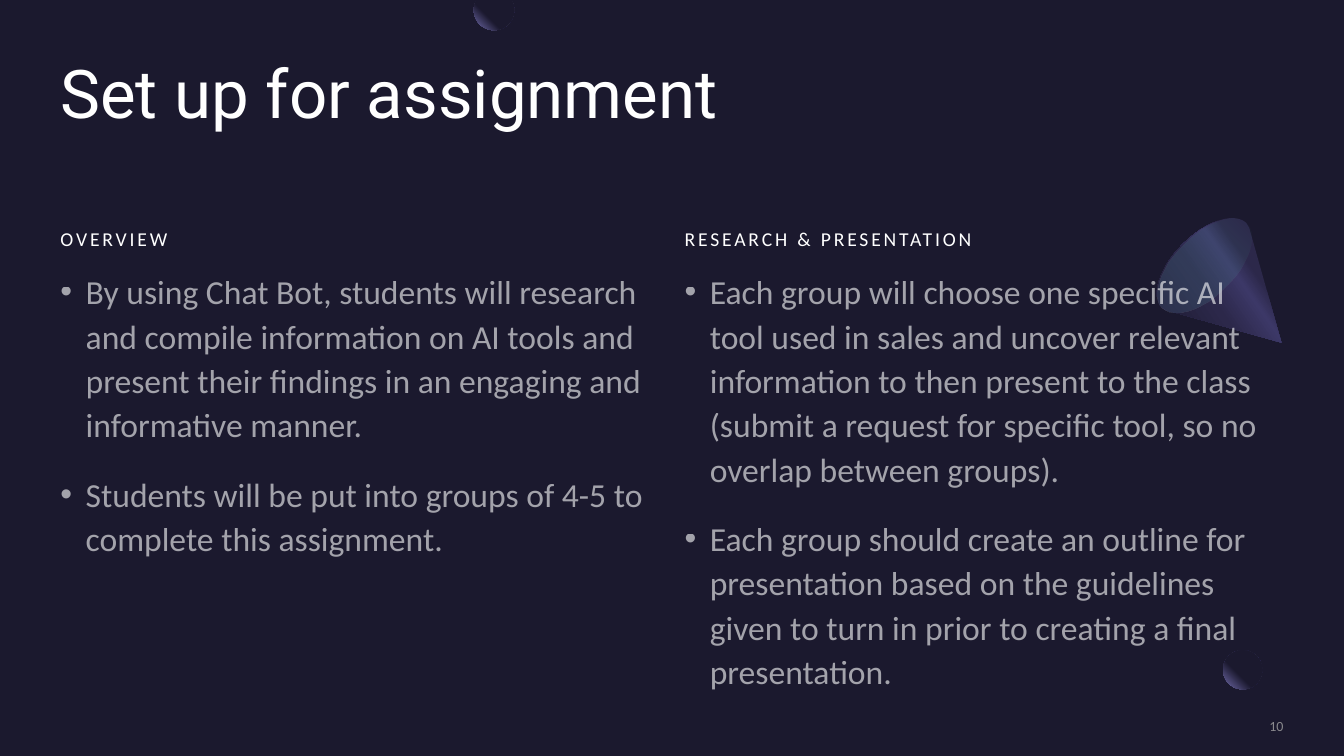
from math import cos, pi, sin

from lxml.etree import SubElement
from pptx import Presentation
from pptx.dml.color import RGBColor
from pptx.enum.shapes import MSO_SHAPE as SHAPE
from pptx.enum.text import MSO_ANCHOR as ANCHOR, PP_ALIGN as ALIGN
from pptx.oxml import parse_xml
from pptx.oxml.ns import nsdecls, qn
from pptx.util import Inches, Pt

W, H = 13.33, 7.5
LEFT, COL_W, GAP = 0.6, 5.95, 0.24
COLORS = {"night": "1B192E", "white": "FFFFFF", "gray": "A6A6A6", "violet": "7771B2",
          "shade": "2C284A", "glow": "3C3867", "rim": "454075", "mint": "5BEFC1"}
MOON = [(60, "night", 100), (100, "violet", 100)]
CONE = [(30, "shade", 100), (40, "glow", 100), (60, "shade", 100), (100, "night", 100)]
CONE_MOUTH = [(0, "rim", 33), (100, "mint", 0)]
COLUMNS = [
    ("OVERVIEW", [
        "By using Chat Bot, students will research and compile information on AI tools "
        "and present their findings in an engaging and informative manner.",
        "Students will be put into groups of 4-5 to complete this assignment."]),
    ("RESEARCH & PRESENTATION", [
        "Each group will choose one specific AI tool used in sales and uncover relevant "
        "information to then present to the class (submit a request for specific tool, "
        "so no overlap between groups).",
        "Each group should create an outline for presentation based on the guidelines "
        "given to turn in prior to creating a final presentation."]),
]


def rgb(name):
    return RGBColor.from_string(COLORS[name])


def set_alpha(fill_xml, percent):
    SubElement(fill_xml[0], qn("a:alpha"), val=str(percent * 1000))


def add_text(slide, box, paragraphs, size, color="white", alpha=None, font="Calibri",
             anchor=ANCHOR.TOP, align=ALIGN.LEFT, line=1.0, before=0, after=0,
             bullet=False, tracking=0):
    tf = slide.shapes.add_textbox(*map(Inches, box)).text_frame
    tf.word_wrap = True
    tf.vertical_anchor = anchor
    tf.margin_left = tf.margin_right = tf.margin_top = tf.margin_bottom = 0
    for i, text in enumerate(paragraphs):
        p = tf.paragraphs[0] if i == 0 else tf.add_paragraph()
        p.alignment, p.line_spacing = align, line
        p.space_before, p.space_after = Pt(before), Pt(after)
        r = p.add_run()
        r.text = text
        r.font.size, r.font.name = Pt(size), font
        r.font.color.rgb = rgb(color)
        rPr = r.font._element
        if alpha:
            set_alpha(rPr.find(qn("a:solidFill")), alpha)
        if tracking:
            rPr.set("spc", str(tracking * 100))
        if bullet:
            pPr = p._p.get_or_add_pPr()
            pPr.set("marL", str(Inches(0.25)))
            pPr.set("indent", str(-Inches(0.25)))
            SubElement(pPr, qn("a:buFont"), typeface="Arial")
            SubElement(pPr, qn("a:buChar"), char="•")


def plain(s):
    s.shadow.inherit = False
    s.line.fill.background()
    return s


def set_gradient(s, stops, angle=None):
    plain(s).fill.background()
    stop_xml = "".join(
        f'<a:gs pos="{pos * 1000}"><a:srgbClr val="{COLORS[name]}">'
        f'<a:alpha val="{alpha * 1000}"/></a:srgbClr></a:gs>' for pos, name, alpha in stops)
    if angle is None:
        shade = '<a:path path="circle"><a:fillToRect l="100000" b="100000"/></a:path>'
    else:
        shade = f'<a:lin ang="{angle * 60000}" scaled="0"/>'
    grad = parse_xml(f'<a:gradFill {nsdecls("a")} rotWithShape="1">'
                     f'<a:gsLst>{stop_xml}</a:gsLst>{shade}</a:gradFill>')
    spPr = s._element.spPr
    spPr.replace(spPr.find(qn("a:noFill")), grad)


def add_outline(slide, points):
    start, *rest = [(Inches(x), Inches(y)) for x, y in points]
    fb = slide.shapes.build_freeform(*start, scale=1.0)
    fb.add_line_segments(rest, close=True)
    return fb.convert_to_shape()


def bezier(a, b, c, d, steps=12):
    return [tuple((1 - t) ** 3 * a[k] + 3 * (1 - t) ** 2 * t * b[k]
                  + 3 * (1 - t) * t ** 2 * c[k] + t ** 3 * d[k] for k in (0, 1))
            for t in (i / steps for i in range(steps + 1))]


def add_lower_moon(slide, x, y, size):
    moon = slide.shapes.add_shape(SHAPE.OVAL, *map(Inches, (x, y, size, size)))
    set_gradient(moon, MOON)
    veil = plain(slide.shapes.add_shape(
        SHAPE.RECTANGLE, *map(Inches, (x + size, y - 0.08, 0.41, size))))
    veil.fill.solid()
    veil.fill.fore_color.rgb = rgb("night")
    set_alpha(veil._element.spPr.find(qn("a:solidFill")), 80)


def add_top_moon(slide, cx, cy, radius):
    start, end, steps = -0.54, pi + 0.54, 40
    angles = [start + (end - start) * i / steps for i in range(steps + 1)]
    arc = [(cx + radius * cos(a), max(0, cy + radius * sin(a))) for a in angles]
    set_gradient(add_outline(slide, arc), MOON)


def add_cone(slide, x, y):
    side = [(1.21, 1.3), (0.08, 0.98)]
    rim = (bezier((0.07, 0.98), (0.06, 0.97), (0.04, 0.96), (0.02, 0.95), 3)
           + bezier((0.02, 0.95), (-0.09, 0.83), (0, 0.55), (0.23, 0.32))
           + bezier((0.23, 0.32), (0.46, 0.09), (0.74, 0), (0.86, 0.11))
           + bezier((0.86, 0.11), (0.87, 0.13), (0.88, 0.14), (0.89, 0.16), 3))
    body = add_outline(slide, [(x + dx, y + dy) for dx, dy in side + rim])
    set_gradient(body, CONE, 145)
    mouth = slide.shapes.add_shape(
        SHAPE.OVAL, *map(Inches, (x + 0.15, y - 0.06, 0.59, 1.18)))
    mouth.rotation = 225
    set_gradient(mouth, CONE_MOUTH, 90)


def add_column(slide, x, y, width, heading, bullets):
    spacing = dict(line=1.1, before=10, after=8)
    add_text(slide, (x, y, width, 0.59), [heading], 14, anchor=ANCHOR.BOTTOM,
             tracking=2, **spacing)
    add_text(slide, (x, y + 0.76, width, 3.84), bullets, 24, alpha=60, bullet=True,
             **spacing)


def build_slide(prs):
    slide = prs.slides.add_slide(prs.slide_layouts[6])
    slide.background.fill.solid()
    slide.background.fill.fore_color.rgb = rgb("night")
    add_lower_moon(slide, 12.13, 6.45, 0.39)
    add_cone(slide, 11.5, 2.1)
    add_top_moon(slide, 4.9, 0.1, 0.2)
    add_text(slide, (LEFT, 0.6, 2 * COL_W + GAP, 1.46), ["Set up for assignment"], 48,
             font="Roboto", line=0.9)
    for i, (heading, bullets) in enumerate(COLUMNS):
        add_column(slide, LEFT + i * (COL_W + GAP), 1.89, COL_W, heading, bullets)
    add_text(slide, (10.88, 7.12, 1.85, 0.17), ["10"], 10, color="gray", alpha=80,
             anchor=ANCHOR.MIDDLE, align=ALIGN.RIGHT)


def main():
    prs = Presentation()
    prs.slide_width, prs.slide_height = Inches(W), Inches(H)
    build_slide(prs)
    prs.save("out.pptx")


if __name__ == "__main__":
    main()
